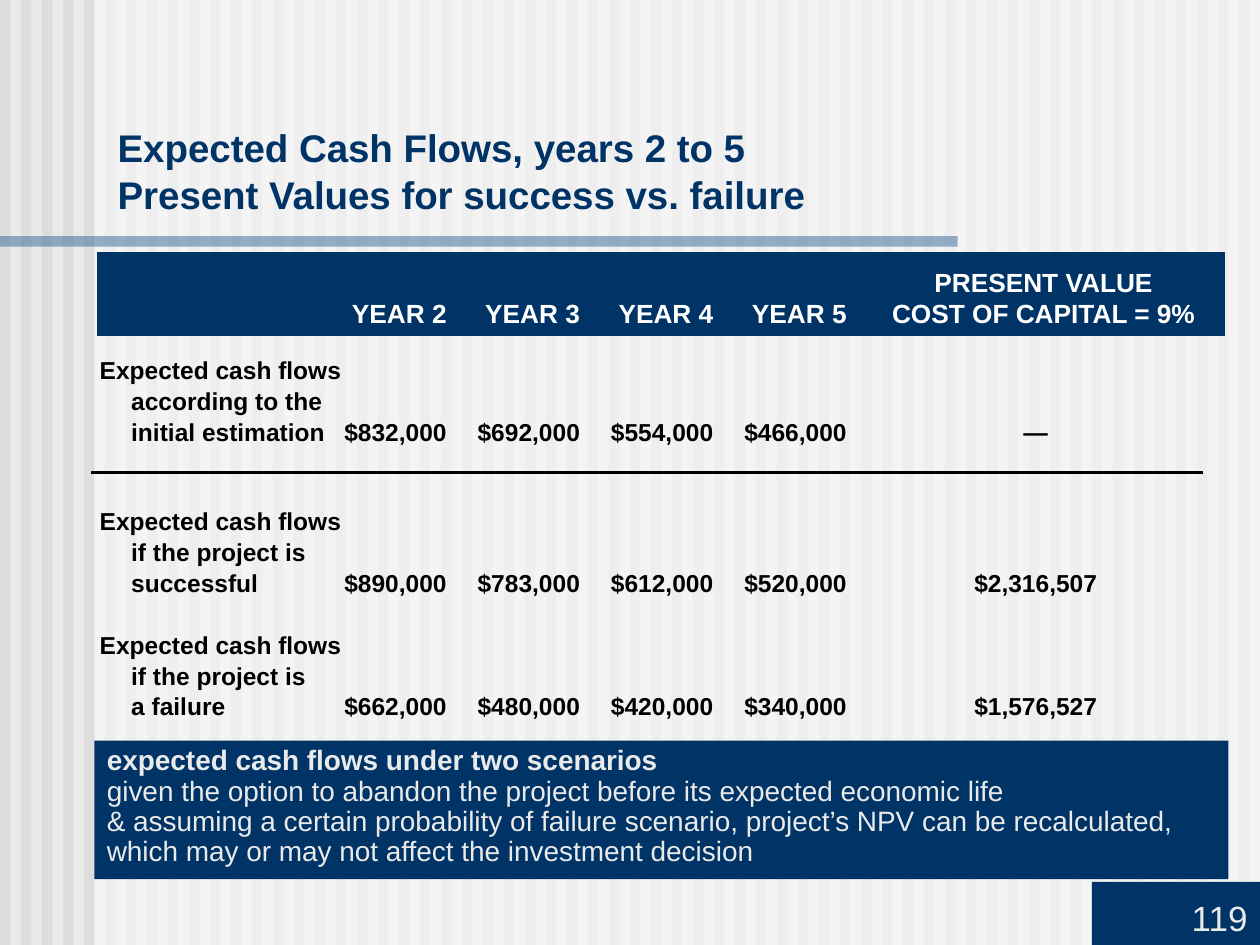
from lxml.etree import SubElement
from pptx import Presentation
from pptx.dml.color import RGBColor
from pptx.enum.shapes import MSO_CONNECTOR, MSO_SHAPE
from pptx.enum.text import MSO_ANCHOR, PP_ALIGN
from pptx.oxml.ns import qn
from pptx.util import Pt

# Content
TITLE = ["Expected Cash Flows, years 2 to 5", "Present Values for success vs. failure"]
HEADER = [[""], ["YEAR 2"], ["YEAR 3"], ["YEAR 4"], ["YEAR 5"],
          ["PRESENT VALUE", "COST OF CAPITAL = 9%"]]
CASH_FLOWS = [
    [["Expected cash flows", "according to the", "initial estimation"],
     ["$832,000"], ["$692,000"], ["$554,000"], ["$466,000"], ["—"]],
    [["Expected cash flows", "if the project is", "successful"],
     ["$890,000"], ["$783,000"], ["$612,000"], ["$520,000"], ["$2,316,507"]],
    [["Expected cash flows", "if the project is", "a failure"],
     ["$662,000"], ["$480,000"], ["$420,000"], ["$340,000"], ["$1,576,527"]],
]
NOTE_HEAD = "expected cash flows under two scenarios"
NOTE_BODY = [
    "given the option to abandon the project before its expected economic life",
    "& assuming a certain probability of failure scenario, project’s NPV can be "
    "recalculated, which may or may not affect the investment decision",
]
PAGE_NUMBER = "119"

# Look
FONT = "Arial"
NAVY, STEEL, PALE, STRIPE = "003366", "336699", "EAEAEA", "DDDDDD"
WHITE, BLACK = "FFFFFF", "000000"

# Geometry in points
WIDTH, HEIGHT = 720, 540
STRIPE_COUNT, STRIPE_PITCH = 60, 12
TABLE_LEFT, TABLE_TOP = 55.4, 144
COLUMN_WIDTHS = [139.8, 60.1, 76.2, 76.2, 76.2, 216]
ROW_HEIGHTS = [48.2, 63, 86.2, 70.8]
LINE_PITCH = 17.7
LABEL_INDENT = 18


def color(hex_text):
    return RGBColor.from_string(hex_text)


def add_rect(slide, left, top, width, height, fill, opacity=None):
    rect = slide.shapes.add_shape(MSO_SHAPE.RECTANGLE, Pt(left), Pt(top), Pt(width), Pt(height))
    rect.shadow.inherit = False
    rect.fill.solid()
    rect.fill.fore_color.rgb = color(fill)
    rect.line.fill.background()
    if opacity is not None:
        rgb = rect.element.spPr.find(qn("a:solidFill"))[0]
        SubElement(rgb, qn("a:alpha"), val=str(opacity * 1000))
    return rect


def add_lines(paragraph, lines, size, text_color, bold):
    for index, line in enumerate(lines):
        if index:
            paragraph.add_line_break()
        run = paragraph.add_run()
        run.text = line
        run.font.name = FONT
        run.font.size = Pt(size)
        run.font.bold = bold
        run.font.color.rgb = color(text_color)


def add_backdrop(slide):
    slide.background.fill.solid()
    slide.background.fill.fore_color.rgb = color(PALE)
    for index in range(STRIPE_COUNT):
        add_rect(slide, index * STRIPE_PITCH, 0, STRIPE_PITCH / 2, HEIGHT, STRIPE)
    add_rect(slide, 54, 0, WIDTH - 54, HEIGHT, WHITE, opacity=50)
    add_rect(slide, 0, 135, 547.2, 6, STEEL, opacity=50)


def format_title(title):
    title.left, title.top, title.width, title.height = Pt(60), Pt(39), Pt(643), Pt(88.5)
    title.text_frame.vertical_anchor = MSO_ANCHOR.BOTTOM
    title.text_frame.word_wrap = True
    paragraph = title.text_frame.paragraphs[0]
    paragraph.alignment = PP_ALIGN.LEFT
    add_lines(paragraph, TITLE, 22, NAVY, True)
    # Bring the title in front of the backdrop
    title.element.getparent().append(title.element)


def fill_cell(cell, lines, row, column):
    is_header = row == 0
    is_last = column == len(HEADER) - 1
    if is_header:
        cell.fill.solid()
        cell.fill.fore_color.rgb = color(NAVY)
    else:
        cell.fill.background()
    cell.vertical_anchor = MSO_ANCHOR.BOTTOM
    cell.margin_left = cell.margin_right = cell.margin_top = 0
    cell.margin_bottom = Pt(4.2 if is_header else 0)
    paragraph = cell.text_frame.paragraphs[0]
    paragraph.line_spacing = Pt(LINE_PITCH)
    if column == 0:
        paragraph.alignment = PP_ALIGN.LEFT
        cell.margin_left = Pt(1.6)
        properties = paragraph._p.get_or_add_pPr()
        properties.set("marL", str(Pt(LABEL_INDENT)))
        properties.set("indent", str(-Pt(LABEL_INDENT)))
    elif is_last:
        paragraph.alignment = PP_ALIGN.CENTER
        cell.margin_left = Pt(9 if is_header else 0)
    else:
        paragraph.alignment = PP_ALIGN.RIGHT
    add_lines(paragraph, lines, 15 if is_header else 14, WHITE if is_header else BLACK, True)


def add_cash_flow_table(slide):
    rows = [HEADER] + CASH_FLOWS
    table = slide.shapes.add_table(
        len(rows), len(HEADER), Pt(TABLE_LEFT), Pt(TABLE_TOP),
        Pt(sum(COLUMN_WIDTHS)), Pt(sum(ROW_HEIGHTS))).table
    table.horz_banding = False
    # "No Style, No Grid"
    table._tbl.tblPr.find(qn("a:tableStyleId")).text = "{2D5ABB26-0587-4C30-8999-92F81FD0307C}"
    for column, width in zip(table.columns, COLUMN_WIDTHS):
        column.width = Pt(width)
    for row, height in zip(table.rows, ROW_HEIGHTS):
        row.height = Pt(height)
    for row, cells in enumerate(rows):
        for column, lines in enumerate(cells):
            fill_cell(table.cell(row, column), lines, row, column)


def add_divider(slide):
    divider = slide.shapes.add_connector(
        MSO_CONNECTOR.STRAIGHT, Pt(687.6), Pt(270), Pt(51.8), Pt(270))
    divider.line.color.rgb = color(BLACK)
    divider.line.width = Pt(2.25)
    SubElement(divider.element.spPr, qn("a:effectLst"))


def add_note(slide):
    note = add_rect(slide, 54, 423.2, 648, 79.2, NAVY)
    note.text_frame.word_wrap = True
    note.text_frame.vertical_anchor = MSO_ANCHOR.TOP
    paragraph = note.text_frame.paragraphs[0]
    paragraph.alignment = PP_ALIGN.LEFT
    paragraph.line_spacing = 0.9
    add_lines(paragraph, [NOTE_HEAD], 16, PALE, True)
    paragraph.add_line_break()
    add_lines(paragraph, NOTE_BODY, 16, PALE, False)


def add_page_number(slide):
    corner = add_rect(slide, 624, 504, 96, 36, NAVY)
    corner.text_frame.vertical_anchor = MSO_ANCHOR.BOTTOM
    paragraph = corner.text_frame.paragraphs[0]
    paragraph.alignment = PP_ALIGN.RIGHT
    add_lines(paragraph, [PAGE_NUMBER], 20, PALE, False)


def main():
    deck = Presentation()
    deck.slide_width, deck.slide_height = Pt(WIDTH), Pt(HEIGHT)
    slide = deck.slides.add_slide(deck.slide_layouts[5])
    add_backdrop(slide)
    format_title(slide.shapes.title)
    add_page_number(slide)
    add_cash_flow_table(slide)
    add_divider(slide)
    add_note(slide)
    deck.save("out.pptx")


if __name__ == "__main__":
    main()
